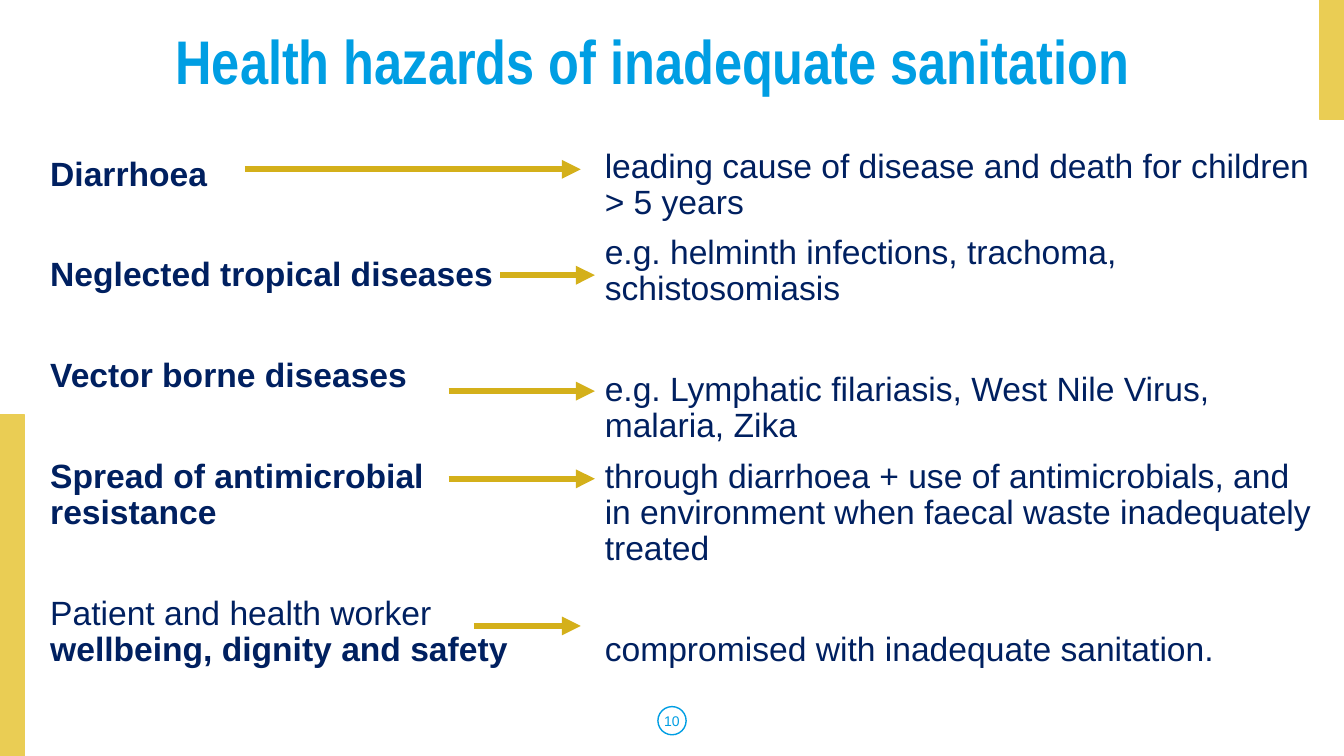
import pptx
import pptx.util
import pptx.dml.color
import pptx.enum.shapes
import pptx.enum.text
import pptx.oxml

Inches = pptx.util.Inches
Pt = pptx.util.Pt
RGB = pptx.dml.color.RGBColor
SHAPE = pptx.enum.shapes.MSO_SHAPE
ALIGN = pptx.enum.text.PP_ALIGN
ANCHOR = pptx.enum.text.MSO_ANCHOR

SAND = RGB(0xEA, 0xCD, 0x54)
GOLD = RGB(0xD4, 0xB0, 0x1A)
BLUE = RGB(0x00, 0x9E, 0xE3)
NAVY = RGB(0x00, 0x20, 0x60)

HEAD = {"name": "Arial Narrow", "size": Pt(44), "bold": True}
BODY = {"name": "Arial", "size": Pt(24)}
SMALL = {"name": "Arial", "size": Pt(10)}

# Space before a paragraph, in points: next to the last one, or a row apart
NEAR, FAR = 10, 46

# Each paragraph: space before, then runs of (text, bold)
HAZARDS = [
    (0, [("Diarrhoea", True)]),
    (FAR, [("Neglected tropical diseases", True)]),
    (FAR, [("Vector borne diseases", True)]),
    (FAR, [("Spread of antimicrobial resistance", True)]),
    (FAR, [("Patient and health worker ", False),
           ("wellbeing, dignity and safety", True)]),
]
EFFECTS = [
    (0, [("leading cause of disease and death for children > 5 years", False)]),
    (NEAR, [("e.g. helminth infections, trachoma, schistosomiasis", False)]),
    (FAR, [("e.g. Lymphatic filariasis, West Nile Virus, malaria, Zika", False)]),
    (NEAR, [("through diarrhoea + use of antimicrobials, and in environment "
             "when faecal waste inadequately treated", False)]),
    (FAR, [("compromised with inadequate sanitation.", False)]),
]
# Arrows: start, end, height
ARROWS = [(2.43, 5.76, 1.68), (4.96, 5.9, 2.73), (4.45, 5.9, 3.88),
          (4.45, 5.9, 4.75), (4.7, 5.76, 6.21)]


def style(item, values):
    for key, value in values.items():
        setattr(item, key, value)


def add_run(para, text, font, color):
    run = para.add_run()
    run.text = text
    style(run.font, font)
    run.font.color.rgb = color


def add_frame(slide, box, anchor):
    frame = slide.shapes.add_textbox(*map(Inches, box)).text_frame
    style(frame, {"word_wrap": True, "vertical_anchor": anchor})
    return frame


def add_form(slide, kind, box, line, fill=None):
    form = slide.shapes.add_shape(kind, *map(Inches, box))
    form.shadow.inherit = False
    if fill is None:
        form.fill.background()
    else:
        form.fill.solid()
        form.fill.fore_color.rgb = fill
    form.line.color.rgb = line
    form.line.width = Pt(1)


# Side bars
def add_bars(slide, wide, high):
    bar, left, right = 0.24, 3.39, 1.18
    add_form(slide, SHAPE.RECTANGLE, (0, high - left, bar, left), SAND, SAND)
    add_form(slide, SHAPE.RECTANGLE, (wide - bar, 0, bar, right), SAND, SAND)


# One centred line of text
def add_label(slide, box, text, font, space=1.0):
    para = add_frame(slide, box, ANCHOR.MIDDLE).paragraphs[0]
    style(para, {"alignment": ALIGN.CENTER, "line_spacing": space})
    add_run(para, text, font, BLUE)


# Page number in its ring
def add_page(slide, box, text):
    left, top, wide, high = box
    ring = 0.28
    add_form(slide, SHAPE.OVAL,
             (left + (wide - ring) / 2, top + (high - ring) / 2, ring, ring),
             BLUE)
    add_label(slide, box, text, SMALL)


# Column of paragraphs
def add_column(slide, box, rows):
    frame = add_frame(slide, box, ANCHOR.TOP)
    for i, (gap, runs) in enumerate(rows):
        para = frame.add_paragraph() if i else frame.paragraphs[0]
        style(para, {"line_spacing": 0.9, "space_before": Pt(gap)})
        for text, bold in runs:
            add_run(para, text, {**BODY, "bold": bold}, NAVY)


# Arrows from hazard to effect
def add_arrow(slide, start, end, y):
    arrow = slide.shapes.add_connector(
        pptx.enum.shapes.MSO_CONNECTOR.STRAIGHT,
        *map(Inches, (start, y, end, y)))
    arrow.line.color.rgb = GOLD
    arrow.line.width = Pt(4.5)
    space = pptx.oxml.ns.nsdecls("a")
    line = arrow.line._get_or_add_ln()
    line.append(pptx.oxml.parse_xml(f'<a:tailEnd {space} type="triangle"/>'))
    line.addnext(pptx.oxml.parse_xml(f"<a:effectLst {space}/>"))


def main():
    wide, high = 13.33, 7.5
    deck = pptx.Presentation()
    style(deck, {"slide_width": Inches(wide), "slide_height": Inches(high)})
    slide = deck.slides.add_slide(deck.slide_layouts[6])

    add_bars(slide, wide, high)
    add_label(slide, (0.73, 0.25, 11.5, 0.78),
              "Health hazards of inadequate sanitation", HEAD, 0.9)
    add_page(slide, (0, 6.95, wide, 0.4), "10")
    add_column(slide, (0.4, 1.51, 5.24, 5.68), HAZARDS)
    add_column(slide, (5.9, 1.43, 7.24, 5.77), EFFECTS)
    for start, end, y in ARROWS:
        add_arrow(slide, start, end, y)
    deck.save("out.pptx")


if __name__ == "__main__":
    main()
